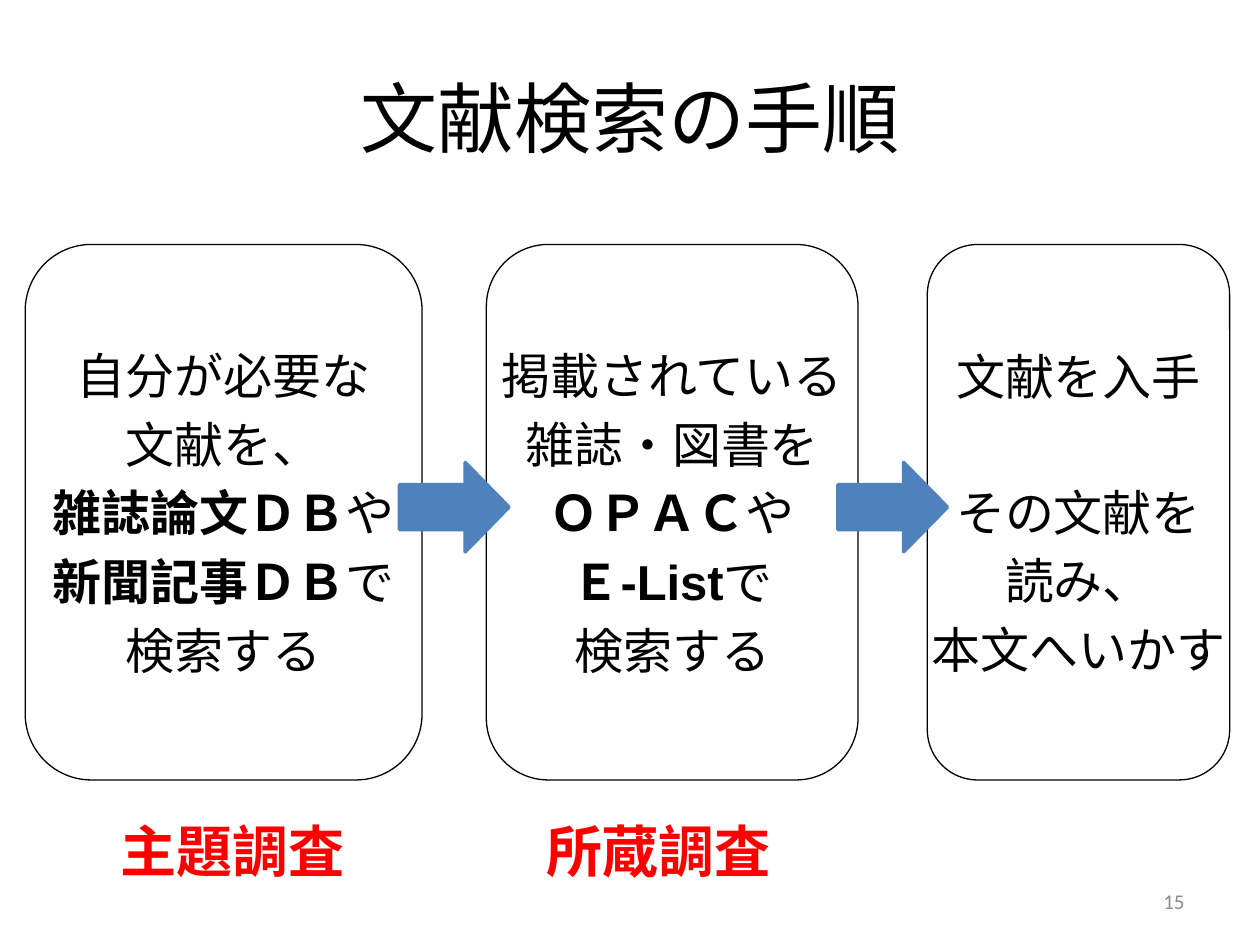
from pptx import Presentation
from pptx.dml.color import RGBColor
from pptx.enum.shapes import MSO_SHAPE
from pptx.enum.text import MSO_ANCHOR, PP_ALIGN
from pptx.util import Inches, Pt

COLORS = {"text": "000000", "arrow": "4F81BD", "label": "FF0000", "number": "8C8C8C"}
STEP_TOP, STEP_HEIGHT = 1.94, 4.25
ARROW_WIDTH, ARROW_HEIGHT = 0.87, 0.71
LINE_GAP, BLOCK_GAP = 5.6, 44

STEPS = [
    (0.2, 3.15, [[("", "自分が必要な"), ("", "文献を、"), ("雑誌論文ＤＢ", "や"),
                  ("新聞記事ＤＢ", "で"), ("", "検索する")]]),
    (3.86, 2.95, [[("", "掲載されている"), ("", "雑誌・図書を"), ("ＯＰＡＣ", "や"),
                   ("Ｅ-List", "で"), ("", "検索する")]]),
    (7.36, 2.4, [[("", "文献を入手")],
                 [("", "その文献を"), ("", "読み、"), ("", "本文へいかす")]]),
]


def rgb(name):
    return RGBColor.from_string(COLORS[name])


def style(r, size, font, color, bold=False):
    r.font.size = Pt(size)
    r.font.name = font
    r.font.bold = bold
    r.font.color.rgb = rgb(color)


def add_title(s, text, left, top, width, height):
    sp = s.shapes.title
    sp.left, sp.top, sp.width, sp.height = map(Inches, (left, top, width, height))
    tf = sp.text_frame
    tf.text = text
    tf.vertical_anchor = MSO_ANCHOR.MIDDLE
    p = tf.paragraphs[0]
    p.alignment = PP_ALIGN.CENTER
    style(p.runs[0], 44, "Calibri", "text")


def add_step(s, blocks, left, top, width, height):
    sp = s.shapes.add_shape(MSO_SHAPE.ROUNDED_RECTANGLE, *map(Inches, (left, top, width, height)))
    sp.shadow.inherit = False
    sp.fill.background()
    sp.line.color.rgb = rgb("text")
    sp.line.width = Pt(0.75)
    tf = sp.text_frame
    tf.word_wrap = False
    tf.vertical_anchor = MSO_ANCHOR.MIDDLE
    lines = [(i, j, line) for i, block in enumerate(blocks) for j, line in enumerate(block)]
    for i, j, (strong, plain) in lines:
        p = tf.paragraphs[0] if i == j == 0 else tf.add_paragraph()
        p.alignment = PP_ALIGN.CENTER
        p.space_before = Pt(BLOCK_GAP if i and not j else LINE_GAP)
        for text, bold in ((strong, True), (plain, False)):
            if text:
                r = p.add_run()
                r.text = text
                style(r, 28, "Arial", "text", bold)


def add_arrow(s, left, top, width, height):
    sp = s.shapes.add_shape(MSO_SHAPE.RIGHT_ARROW, *map(Inches, (left, top, width, height)))
    sp.adjustments[1] = 0.49
    sp.shadow.inherit = False
    sp.fill.solid()
    sp.fill.fore_color.rgb = rgb("arrow")
    sp.line.color.rgb = rgb("arrow")
    sp.line.width = Pt(2)


def add_text(s, text, box, size, color, align, bold=False):
    tf = s.shapes.add_textbox(*map(Inches, box)).text_frame
    tf.word_wrap = True
    tf.text = text
    tf.vertical_anchor = MSO_ANCHOR.MIDDLE
    p = tf.paragraphs[0]
    p.alignment = align
    style(p.runs[0], size, "Calibri", color, bold)


def main():
    prs = Presentation()
    prs.slide_width, prs.slide_height = Inches(10), Inches(7.5)
    s = prs.slides.add_slide(prs.slide_layouts[5])
    add_title(s, "文献検索の手順", 0.5, 0.3, 9, 1.25)
    for left, width, blocks in STEPS:
        add_step(s, blocks, left, STEP_TOP, width, STEP_HEIGHT)
    for (left, width, _), (next_left, _, _) in zip(STEPS, STEPS[1:]):
        middle = (left + width + next_left) / 2
        add_arrow(s, middle - ARROW_WIDTH / 2, 3.67, ARROW_WIDTH, ARROW_HEIGHT)
    for text, left in (("主題調査", 0.67), ("所蔵調査", 4.05)):
        add_text(s, text, (left, 6.43, 2.36, 0.64), 32, "label", PP_ALIGN.CENTER, True)
    add_text(s, "15", (7.17, 6.95, 2.33, 0.4), 12, "number", PP_ALIGN.RIGHT)
    prs.save("out.pptx")


if __name__ == "__main__":
    main()
